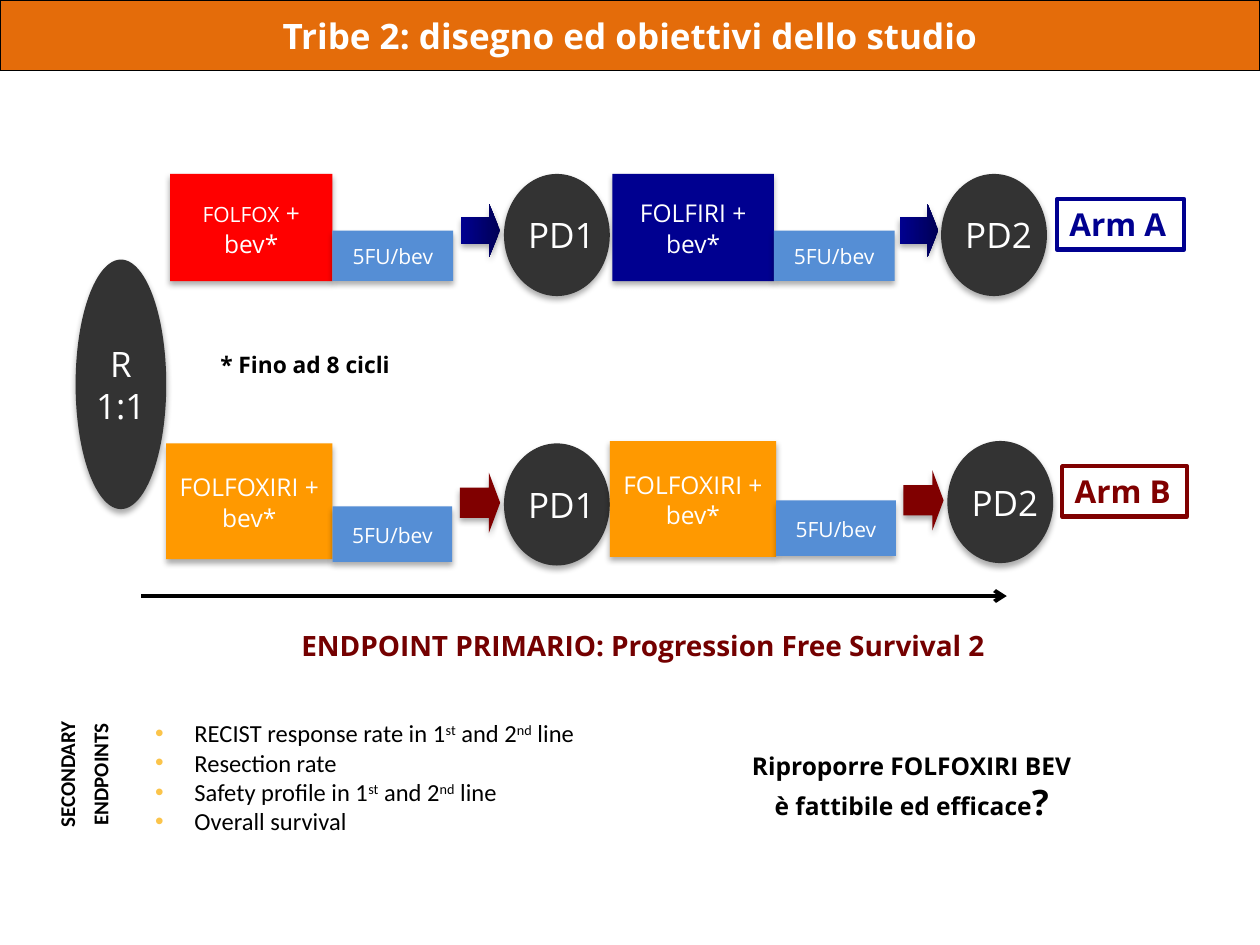
from dataclasses import dataclass
from lxml.etree import SubElement
from pptx import Presentation
from pptx.dml.color import RGBColor
from pptx.enum.shapes import MSO_CONNECTOR as Connector, MSO_SHAPE as Preset
from pptx.enum.text import MSO_ANCHOR as Anchor, MSO_AUTO_SIZE as AutoSize, PP_ALIGN as Align
from pptx.oxml.ns import qn
from pptx.util import Pt


@dataclass(frozen=True)
class Theme:
    heading_font: str = "Open Sans"
    list_font: str = "Calibri"
    white: str = "FFFFFF"
    black: str = "000000"
    banner: str = "E46C0A"
    node: str = "333333"
    maintenance: str = "558ED5"
    doublet: str = "FF0000"
    triplet: str = "FF9900"
    navy: str = "000090"
    deep_navy: str = "000055"
    maroon: str = "800000"
    endpoint: str = "740000"
    bullet: str = "FBC44A"
    large: int = 20
    label: int = 18
    heading: int = 16
    body: int = 14
    note: int = 13
    small: int = 12


class StudySlide:
    def __init__(self, slide, theme):
        self.slide = slide
        self.theme = theme

    def place(self, shape, box):
        shape.left, shape.top, shape.width, shape.height = (Pt(value) for value in box)

    def set_text(self, shape, lines, size, color, font=None, bold=False, align=Align.CENTER,
                 anchor=Anchor.MIDDLE, spacing=None, wrap=True, accent=None, bullet=None):
        frame = shape.text_frame
        frame.auto_size = AutoSize.NONE
        frame.word_wrap = wrap
        frame.vertical_anchor = anchor
        for index, line in enumerate(lines):
            paragraph = frame.add_paragraph() if index else frame.paragraphs[0]
            paragraph.alignment = align
            paragraph.space_before = Pt(0)
            if spacing:
                paragraph.line_spacing = spacing
            if bullet:
                self.add_bullet(paragraph, bullet)
            paragraph.font.size = Pt(size)
            paragraph.font.name = font or self.theme.heading_font
            paragraph.font.bold = bold
            paragraph.font.color.rgb = RGBColor.from_string(color)
            for position, piece in enumerate(line.split("^")):
                if not piece:
                    continue
                run = paragraph.add_run()
                run.text = piece
                if position % 2 and accent:
                    run.font.size = Pt(accent)
                elif position % 2:
                    run._r.get_or_add_rPr().set("baseline", "30000")

    def add_bullet(self, paragraph, color):
        properties = paragraph._p.get_or_add_pPr()
        properties.set("marL", str(Pt(22.5)))
        properties.set("indent", str(-Pt(22.5)))
        bullet_color = SubElement(properties, qn("a:buClr"))
        SubElement(bullet_color, qn("a:srgbClr"), val=color)
        SubElement(properties, qn("a:buChar"), char="•")

    def title(self, text, box):
        shape = self.slide.shapes.title
        self.place(shape, box)
        shape.fill.solid()
        shape.fill.fore_color.rgb = RGBColor.from_string(self.theme.banner)
        shape.line.color.rgb = RGBColor.from_string(self.theme.black)
        shape.line.width = Pt(0.75)
        self.set_text(shape, [text], self.theme.large, self.theme.white, bold=True)

    def bullets(self, lines, box):
        shape = self.slide.placeholders[1]
        self.place(shape, box)
        self.set_text(shape, lines, self.theme.body, self.theme.black, self.theme.list_font,
                      align=Align.LEFT, anchor=Anchor.TOP, bullet=self.theme.bullet)

    def solid(self, preset, box, color):
        shape = self.slide.shapes.add_shape(preset, *(Pt(value) for value in box))
        shape.fill.solid()
        shape.fill.fore_color.rgb = RGBColor.from_string(color)
        shape.line.fill.background()
        shape.shadow.inherit = False
        effects = shape._element.spPr.find(qn("a:effectLst"))
        shadow = SubElement(effects, qn("a:outerShdw"), blurRad=str(Pt(3.5)), dist=str(Pt(2.2)),
                            dir="5400000", rotWithShape="0")
        shadow_color = SubElement(shadow, qn("a:srgbClr"), val=self.theme.black)
        SubElement(shadow_color, qn("a:alpha"), val="32000")
        return shape

    def treatment(self, text, box, color, size, accent=None):
        shape = self.solid(Preset.RECTANGLE, box, color)
        self.set_text(shape, [text], size, self.theme.white, spacing=1.05, accent=accent)

    def node(self, lines, box, nudge=0):
        shape = self.solid(Preset.OVAL, box, self.theme.node)
        self.set_text(shape, lines, self.theme.large, self.theme.white, wrap=False)
        shape.text_frame.margin_left = Pt(7.2 + nudge)

    def block_arrow(self, box, color, shade=None):
        shape = self.solid(Preset.RIGHT_ARROW, box, color)
        shape.adjustments[1] = 0.28
        if shade:
            shape.fill.gradient()
            shape.fill.gradient_angle = 180
            for stop, stop_color in zip(shape.fill.gradient_stops, (shade, color)):
                stop.color.rgb = RGBColor.from_string(stop_color)

    def arm_label(self, text, box, color):
        shape = self.slide.shapes.add_shape(Preset.RECTANGLE, *(Pt(value) for value in box))
        shape.shadow.inherit = False
        shape.fill.background()
        shape.line.color.rgb = RGBColor.from_string(color)
        shape.line.width = Pt(2.5)
        self.set_text(shape, [text], self.theme.label, color, bold=True, align=Align.LEFT,
                      anchor=Anchor.TOP, wrap=False)

    def text(self, lines, box, size, color=None, rotation=0, **style):
        shape = self.slide.shapes.add_textbox(*(Pt(value) for value in box))
        shape.rotation = rotation
        self.set_text(shape, lines, size, color or self.theme.black, bold=True, **style)

    def timeline(self, start, end, y):
        line = self.slide.shapes.add_connector(
            Connector.STRAIGHT, Pt(start), Pt(y), Pt(end), Pt(y))
        line.line.color.rgb = RGBColor.from_string(self.theme.black)
        line.line.width = Pt(2.25)
        SubElement(line.line._get_or_add_ln(), qn("a:tailEnd"), type="arrow")
        SubElement(line._element.spPr, qn("a:effectLst"))

    def phase(self, text, progression, top, block, tail, arrow, node_left, color,
              arrow_color, shade=None, accent=None):
        left, width, height = block
        tail_offset, tail_width, tail_height = tail
        arrow_left, arrow_offset, arrow_width, arrow_height = arrow
        self.treatment(text, (left, top, width, height), color, self.theme.body, accent)
        self.treatment("5FU/bev", (left + width, top + tail_offset, tail_width, tail_height),
                       self.theme.maintenance, self.theme.small)
        self.block_arrow((arrow_left, top + arrow_offset, arrow_width, arrow_height),
                         arrow_color, shade)
        self.node([progression], (node_left, top, 60.5, 69.8), nudge=5.2)


def main():
    presentation = Presentation()
    presentation.slide_width, presentation.slide_height = Pt(720), Pt(540)
    theme = Theme()
    study = StudySlide(presentation.slides.add_slide(presentation.slide_layouts[1]), theme)

    study.title("Tribe 2: disegno ed obiettivi dello studio", (0, 0, 720, 40.3))
    study.node(["R", "1:1"], (43.2, 148.3, 51.8, 142.6))

    for text, progression, left, width, arrow_left, node_left, color, accent in (
        ("^FOLFOX^ + bev*", "PD1", 97.2, 92.8, 263.5, 288, theme.doublet, theme.small),
        ("FOLFIRI + bev*", "PD2", 350, 92.2, 514, 537.8, theme.navy, None),
    ):
        study.phase(text, progression, 99.4, (left, width, 61.2), (32.4, 69, 28.8),
                    (arrow_left, 17.2, 22.3, 30.2), node_left, color,
                    theme.navy, theme.deep_navy, accent)

    for progression, top, left, tail_offset, arrow_left, node_left in (
        ("PD1", 253.4, 95, 36, 262.8, 288),
        ("PD2", 252, 348.5, 34, 516.2, 541.4),
    ):
        study.phase("FOLFOXIRI + bev*", progression, top, (left, 95, 66.2),
                    (tail_offset, 68.4, 31.7), (arrow_left, 16.6, 23, 34.6),
                    node_left, theme.triplet, theme.maroon)

    study.arm_label("Arm A", (604, 113.8, 72.7, 28.8), theme.navy)
    study.arm_label("Arm B", (607, 266.4, 71.3, 28.8), theme.maroon)
    study.text(["* Fino ad 8 cicli"], (118.8, 196.6, 117.4, 23), theme.note,
               align=Align.LEFT, anchor=Anchor.TOP, wrap=False)
    study.timeline(80.6, 575.3, 340.6)
    study.text(["ENDPOINT PRIMARIO: Progression Free Survival 2"],
               (154.8, 355.7, 425.5, 26.6), theme.heading, theme.endpoint,
               anchor=Anchor.TOP, wrap=False)
    study.text(["SECONDARY", "ENDPOINTS"], (-14.4, 419.8, 119.5, 45.4), theme.small,
               rotation=270, font=theme.list_font, spacing=Pt(19))
    study.bullets(["RECIST response rate in 1^st^ and 2^nd^ line", "Resection rate",
                   "Safety profile in 1^st^ and 2^nd^ line", "Overall survival"],
                  (81.4, 406.8, 342.7, 74.9))
    study.text(["Riproporre FOLFOXIRI BEV", "è fattibile ed efficace^?^"],
               (329.8, 425.5, 382.3, 97.2), theme.body, anchor=Anchor.TOP,
               accent=theme.large)
    presentation.save("out.pptx")


if __name__ == "__main__":
    main()
